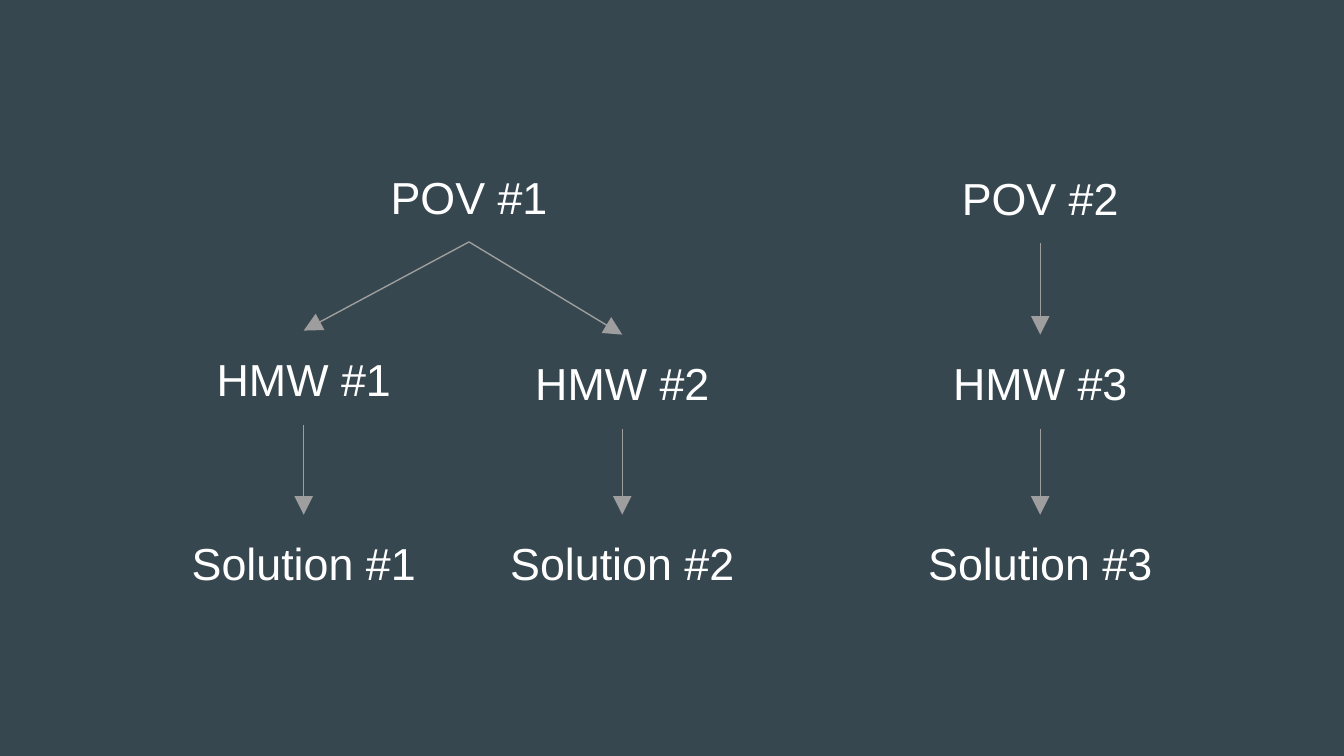
from dataclasses import dataclass

from lxml import etree
from pptx import Presentation
from pptx.dml.color import RGBColor
from pptx.enum.shapes import MSO_CONNECTOR
from pptx.enum.text import MSO_ANCHOR, PP_ALIGN
from pptx.oxml.ns import qn
from pptx.util import Inches, Pt

LINE = MSO_CONNECTOR.STRAIGHT
TOP = MSO_ANCHOR.TOP
CENTER = PP_ALIGN.CENTER


@dataclass(frozen=True)
class Theme:
    back: RGBColor = RGBColor.from_string("37474F")
    text: RGBColor = RGBColor.from_string("FFFFFF")
    arrow: RGBColor = RGBColor.from_string("9E9E9E")
    font: str = "Arial"
    size: Pt = Pt(24)
    stroke: Pt = Pt(0.75)


THEME = Theme()
WIDE = Inches(10)
HIGH = WIDE * 9 // 16
HEIGHT = 0.7
SHORT, LONG = 1.65, 1.89

# Label: center x, top, width
NODES = {
    "POV #1": (3.49, 1.1, SHORT),
    "POV #2": (7.74, 1.11, SHORT),
    "HMW #1": (2.26, 2.46, SHORT),
    "HMW #2": (4.63, 2.49, SHORT),
    "HMW #3": (7.74, 2.49, SHORT),
    "Solution #1": (2.26, 3.83, LONG),
    "Solution #2": (4.63, 3.83, LONG),
    "Solution #3": (7.74, 3.83, LONG),
}
LINKS = [
    ("POV #1", "HMW #1"),
    ("POV #1", "HMW #2"),
    ("HMW #1", "Solution #1"),
    ("HMW #2", "Solution #2"),
    ("POV #2", "HMW #3"),
    ("HMW #3", "Solution #3"),
]

PAD = Inches(0.1)
FRAME = {"word_wrap": True, "vertical_anchor": TOP, "margin_left": PAD,
         "margin_right": PAD, "margin_top": PAD, "margin_bottom": PAD}
PARA = {"alignment": CENTER, "line_spacing": 1.15, "space_after": Pt(16)}
FONT = {"name": THEME.font, "size": THEME.size}


def apply(item, values):
    for name, value in values.items():
        setattr(item, name, value)


def add_node(slide, label, mid, top, width):
    box = slide.shapes.add_textbox(Inches(mid - width / 2), Inches(top),
                                   Inches(width), Inches(HEIGHT))
    frame = box.text_frame
    apply(frame, FRAME)
    para = frame.paragraphs[0]
    apply(para, PARA)
    run = para.add_run()
    run.text = label
    apply(run.font, FONT)
    run.font.color.rgb = THEME.text


def add_arrow(slide, start, end):
    # From the bottom center of one node to the top center of the next
    x1, y1, _ = NODES[start]
    x2, y2, _ = NODES[end]
    arrow = slide.shapes.add_connector(LINE, Inches(x1), Inches(y1 + HEIGHT),
                                       Inches(x2), Inches(y2))
    arrow.line.color.rgb = THEME.arrow
    arrow.line.width = THEME.stroke
    etree.SubElement(arrow.get_or_add_ln(), qn("a:tailEnd"),
                     type="triangle", w="lg", len="lg")
    etree.SubElement(arrow.element.spPr, qn("a:effectLst"))


def main():
    deck = Presentation()
    apply(deck, {"slide_width": WIDE, "slide_height": HIGH})
    slide = deck.slides.add_slide(deck.slide_layouts[6])

    # Background
    fill = slide.background.fill
    fill.solid()
    fill.fore_color.rgb = THEME.back

    # Labels
    for label, place in NODES.items():
        add_node(slide, label, *place)

    # Arrows
    for start, end in LINKS:
        add_arrow(slide, start, end)

    deck.save("out.pptx")


if __name__ == "__main__":
    main()
